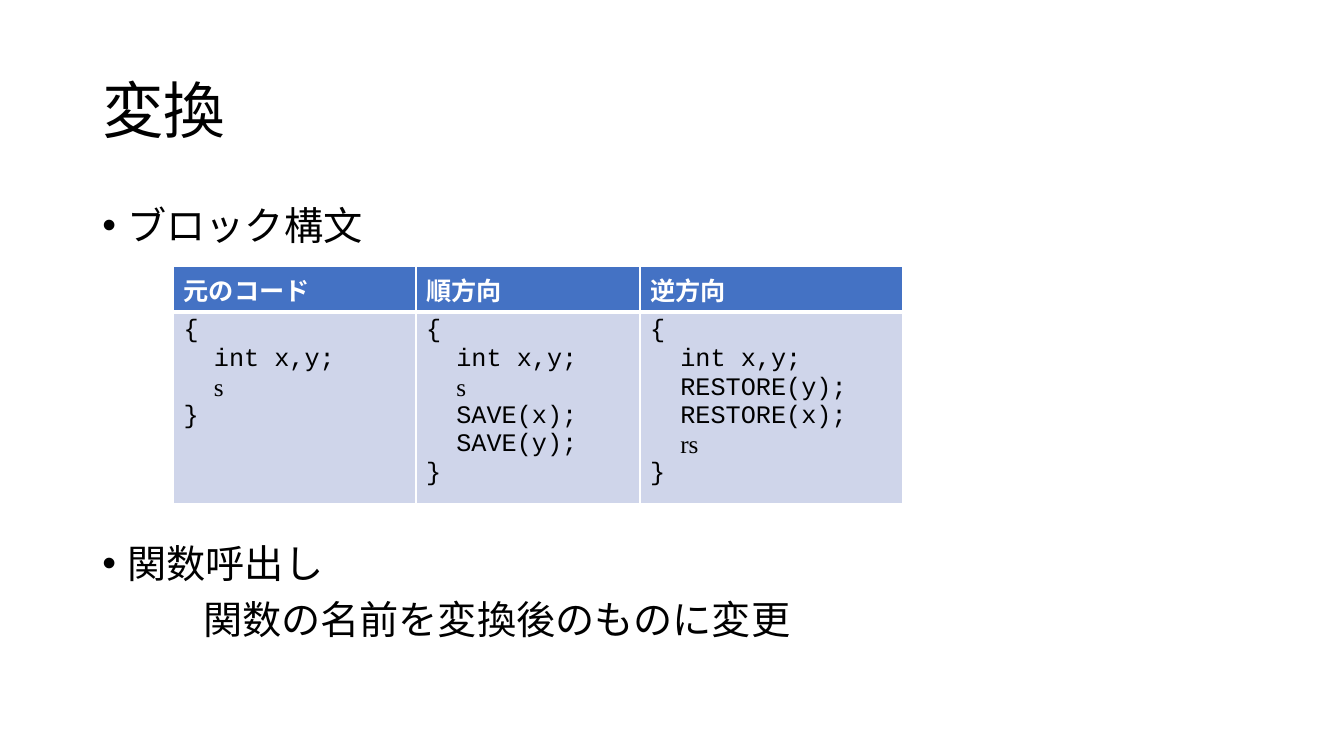
from dataclasses import dataclass

import lxml.etree
import pptx
import pptx.dml.color
import pptx.enum.text
import pptx.oxml.ns
import pptx.util

Pt = pptx.util.Pt
qn = pptx.oxml.ns.qn


@dataclass(frozen=True)
class Theme:
    black: str = "000000"
    white: str = "FFFFFF"
    header_fill: str = "4472C4"
    code_fill: str = "CFD5EA"
    text_font: str = "Noto Sans CJK JP"
    code_font: str = "Courier New"
    math_font: str = "Times New Roman"
    title_size: float = 44
    body_size: float = 28
    table_size: float = 18


@dataclass(frozen=True)
class Line:
    text: str
    bullet: bool = False
    margin: float = 0


@dataclass(frozen=True)
class TextBlock:
    top: float
    height: float
    size: float
    lines: tuple[Line, ...]
    space_before: float = 0
    anchor: pptx.enum.text.MSO_ANCHOR = pptx.enum.text.MSO_ANCHOR.TOP


@dataclass(frozen=True)
class CodeColumn:
    heading: str
    width: float
    statements: tuple[str, ...]


THEME = Theme()
TEXT_LEFT, TEXT_WIDTH = 66, 828
TABLE_LEFT, TABLE_TOP = 124, 190
ROW_HEIGHTS = (32.8, 131)
CODE_INDENT = 21.6  # two characters of the code font
SYMBOLS = ("s", "rs")  # statements set as mathematical symbols

TEXT_BLOCKS = (
    TextBlock(28.75, 104.4, THEME.title_size, (Line("変換"),),
              anchor=pptx.enum.text.MSO_ANCHOR.MIDDLE),
    TextBlock(143.75, 44, THEME.body_size,
              (Line("ブロック構文", bullet=True, margin=18),), space_before=10),
    TextBlock(385.2, 92, THEME.body_size,
              (Line("関数呼出し", bullet=True, margin=18),
               Line("関数の名前を変換後のものに変更", margin=72)), space_before=10),
)
CODE_COLUMNS = (
    CodeColumn("元のコード", 173.2, ("int x,y;", "s")),
    CodeColumn("順方向", 160, ("int x,y;", "s", "SAVE(x);", "SAVE(y);")),
    CodeColumn("逆方向", 187.2, ("int x,y;", "RESTORE(y);", "RESTORE(x);", "rs")),
)


def style_span(span, font: str, size: float, color: str, bold: bool = False) -> None:
    span.font.name = font
    span.font.size = Pt(size)
    span.font.bold = bold
    span.font.color.rgb = pptx.dml.color.RGBColor.from_string(color)
    east_asian = lxml.etree.SubElement(span.font._element, qn("a:ea"))
    east_asian.set("typeface", THEME.text_font)


def set_margin(para, margin: float, bullet: bool = False) -> None:
    properties = para._p.get_or_add_pPr()
    properties.set("marL", str(Pt(margin)))
    properties.set("indent", str(-Pt(margin) if bullet else 0))
    if bullet:
        bullet_font = lxml.etree.SubElement(properties, qn("a:buFont"))
        bullet_font.set("typeface", "Arial")
        lxml.etree.SubElement(properties, qn("a:buChar")).set("char", "•")


def add_text_block(page, block: TextBlock) -> None:
    box = page.shapes.add_textbox(
        Pt(TEXT_LEFT), Pt(block.top), Pt(TEXT_WIDTH), Pt(block.height))
    frame = box.text_frame
    frame.word_wrap = True
    frame.vertical_anchor = block.anchor
    frame.text = "\n".join(line.text for line in block.lines)
    for para, line in zip(frame.paragraphs, block.lines):
        para.line_spacing = 0.9
        para.space_before = Pt(block.space_before)
        set_margin(para, line.margin, line.bullet)
        style_span(para.runs[0], THEME.text_font, block.size, THEME.black)


def style_cell(cell, fill: str, top: float, bottom: float) -> None:
    cell.fill.solid()
    cell.fill.fore_color.rgb = pptx.dml.color.RGBColor.from_string(fill)
    properties = cell._tc.get_or_add_tcPr()
    borders = (("a:lnL", 1), ("a:lnR", 1), ("a:lnT", top), ("a:lnB", bottom))
    for position, (tag, width) in enumerate(borders):
        border = lxml.etree.Element(qn(tag), w=str(Pt(width)))
        solid = lxml.etree.SubElement(border, qn("a:solidFill"))
        lxml.etree.SubElement(solid, qn("a:srgbClr")).set("val", THEME.white)
        properties.insert(position, border)


def add_code_table(page, columns: tuple[CodeColumn, ...]) -> None:
    width = sum(column.width for column in columns)
    table = page.shapes.add_table(
        len(ROW_HEIGHTS), len(columns), Pt(TABLE_LEFT), Pt(TABLE_TOP),
        Pt(width), Pt(sum(ROW_HEIGHTS))).table
    for row, height in zip(table.rows, ROW_HEIGHTS):
        row.height = Pt(height)
    for index, column in enumerate(columns):
        table.columns[index].width = Pt(column.width)

        # Heading
        heading = table.cell(0, index)
        heading.text_frame.text = column.heading
        style_span(heading.text_frame.paragraphs[0].runs[0], THEME.text_font,
                   THEME.table_size, THEME.white, bold=True)
        style_cell(heading, THEME.header_fill, top=1, bottom=3)

        # Code block with its statements indented between the braces
        code = table.cell(1, index)
        code.text_frame.text = "\n".join(("{", *column.statements, "}"))
        for para in code.text_frame.paragraphs:
            if para.text in column.statements:
                set_margin(para, CODE_INDENT)
            font = THEME.math_font if para.text in SYMBOLS else THEME.code_font
            style_span(para.runs[0], font, THEME.table_size, THEME.black)
        style_cell(code, THEME.code_fill, top=3, bottom=1)


def main() -> None:
    deck = pptx.Presentation()
    deck.slide_width, deck.slide_height = Pt(960), Pt(540)
    page = deck.slides.add_slide(deck.slide_layouts[6])

    # Title and bullets
    for block in TEXT_BLOCKS:
        add_text_block(page, block)

    # Code comparison
    add_code_table(page, CODE_COLUMNS)
    deck.save("out.pptx")


if __name__ == "__main__":
    main()
